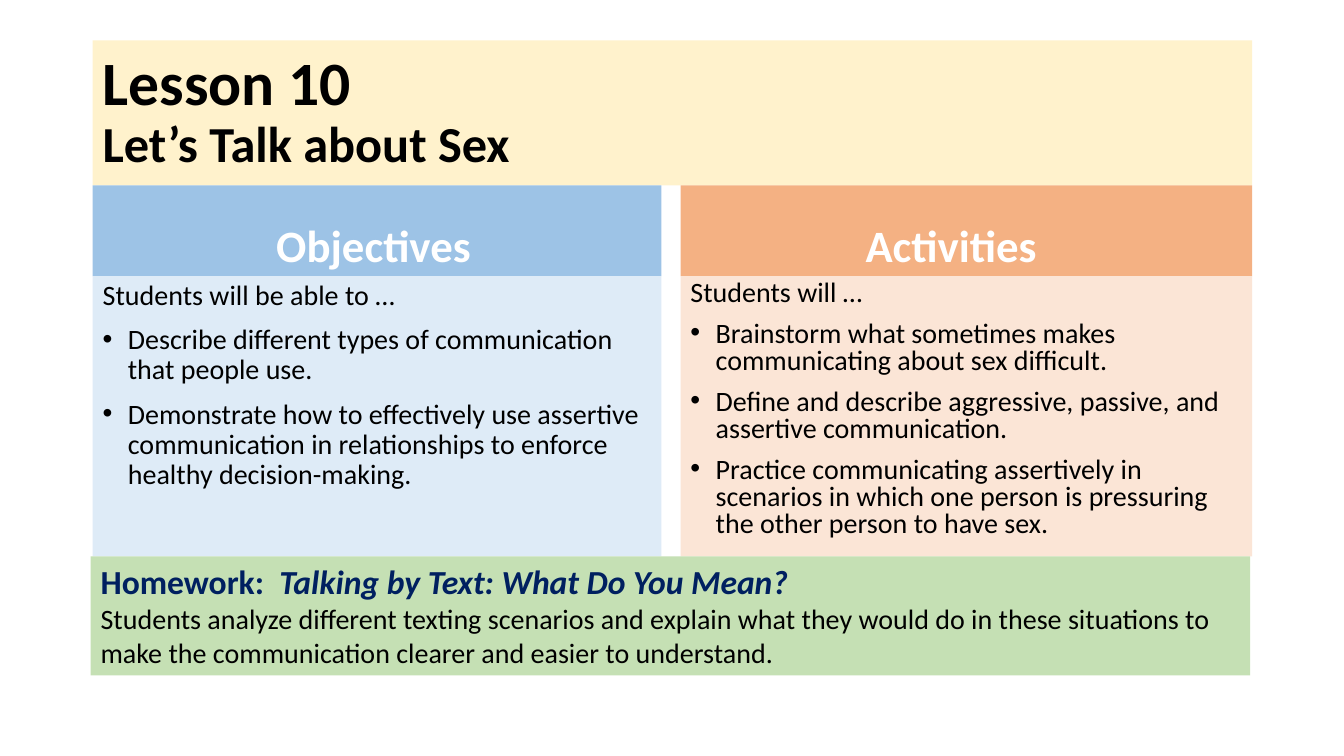
from lxml import etree
from pptx import Presentation, util as u
from pptx.dml.color import RGBColor
from pptx.enum import shapes, text
from pptx.oxml.ns import qn

# Content
TITLE = ("Lesson 10", "Let’s Talk about Sex")
COLUMNS = [
    dict(heading="Objectives", hue="blue", spacing=0.9,
         lead="Students will be able to …",
         points=["Describe different types of communication that people use.",
                 "Demonstrate how to effectively use assertive communication in "
                 "relationships to enforce healthy decision-making."]),
    dict(heading="Activities", hue="orange", spacing=0.8,
         lead="Students will …",
         points=["Brainstorm what sometimes makes communicating about sex difficult.",
                 "Define and describe aggressive, passive, and assertive communication.",
                 "Practice communicating assertively in scenarios in which one person "
                 "is pressuring the other person to have sex."]),
]
HOMEWORK = ("Homework:  ", "Talking by Text: What Do You Mean?")
HOMEWORK_TASK = ("Students analyze different texting scenarios and explain what they would do "
                 "in these situations to make the communication clearer and easier to understand.")

COLORS = {"cream": "FFF2CC", "blue": "9DC3E6", "blue pale": "DEEBF7",
          "orange": "F4B183", "orange pale": "FBE5D6", "green": "C5E0B4",
          "navy": "002060", "black": "000000", "white": "FFFFFF"}

# Layout in inches: stacked bands, two columns
SLIDE_W, SLIDE_H = 13.33, 7.5
LEFT, FULL_W, GUTTER = 0.92, 11.5, 0.19
COLUMN_W = (5.64, 5.67)
TITLE_Y, HEADING_Y, BODY_Y, HOMEWORK_Y, BOTTOM = 0.4, 1.84, 2.74, 5.52, 6.7

deck = Presentation()
deck.slide_width, deck.slide_height = u.Inches(SLIDE_W), u.Inches(SLIDE_H)
slide = deck.slides.add_slide(deck.slide_layouts[6])


def add_band(left, top, width, bottom, fill, anchor=text.MSO_ANCHOR.TOP):
    band = slide.shapes.add_shape(
        shapes.MSO_SHAPE.RECTANGLE,
        *(u.Inches(n) for n in (left, top, width, bottom - top)))
    band.shadow.inherit = False
    band.line.fill.background()
    band.fill.solid()
    band.fill.fore_color.rgb = RGBColor.from_string(COLORS[fill])
    frame = band.text_frame
    frame.word_wrap, frame.vertical_anchor = True, anchor
    return frame


def format_paragraph(paragraph, **formats):
    for name, value in {"alignment": text.PP_ALIGN.LEFT, **formats}.items():
        setattr(paragraph, name, value)
    return paragraph


def add_run(paragraph, words, size, color="black", **formats):
    run = paragraph.add_run()
    run.text = words
    run.font.color.rgb = RGBColor.from_string(COLORS[color])
    for name, value in {"name": "Calibri", "size": u.Pt(size), **formats}.items():
        setattr(run.font, name, value)


def add_bullet(paragraph):
    props = paragraph._p.get_or_add_pPr()
    indent = u.Inches(0.25)
    props.set("marL", str(indent))
    props.set("indent", str(-indent))
    etree.SubElement(props, qn("a:buFont")).set("typeface", "Arial")
    etree.SubElement(props, qn("a:buChar")).set("char", "•")


# Title
frame = add_band(LEFT, TITLE_Y, FULL_W, HEADING_Y, "cream", text.MSO_ANCHOR.MIDDLE)
title = format_paragraph(frame.paragraphs[0], line_spacing=0.9)
add_run(title, TITLE[0], 44, bold=True)
title.add_line_break()
add_run(title, TITLE[1], 36, bold=True)

# Objectives and activities
left = LEFT
for column, width in zip(COLUMNS, COLUMN_W):
    frame = add_band(left, HEADING_Y, width, BODY_Y, column["hue"], text.MSO_ANCHOR.BOTTOM)
    heading = format_paragraph(frame.paragraphs[0], alignment=text.PP_ALIGN.CENTER)
    add_run(heading, column["heading"], 32, "white", bold=True)
    add_run(heading, "\t", 24, bold=True)

    frame = add_band(left, BODY_Y, width, HOMEWORK_Y, column["hue"] + " pale")
    for i, words in enumerate([column["lead"], *column["points"]]):
        paragraph = frame.add_paragraph() if i else frame.paragraphs[0]
        format_paragraph(paragraph, line_spacing=column["spacing"], space_before=u.Pt(10))
        if i:
            add_bullet(paragraph)
        add_run(paragraph, words, 20)
    left += width + GUTTER

# Homework, set slightly left of the columns
frame = add_band(LEFT - 0.02, HOMEWORK_Y, FULL_W, BOTTOM, "green")
homework = format_paragraph(frame.paragraphs[0])
for words, italic in zip(HOMEWORK, (False, True)):
    add_run(homework, words, 24, "navy", bold=True, italic=italic)
add_run(format_paragraph(frame.add_paragraph()), HOMEWORK_TASK, 20)

deck.save("out.pptx")
